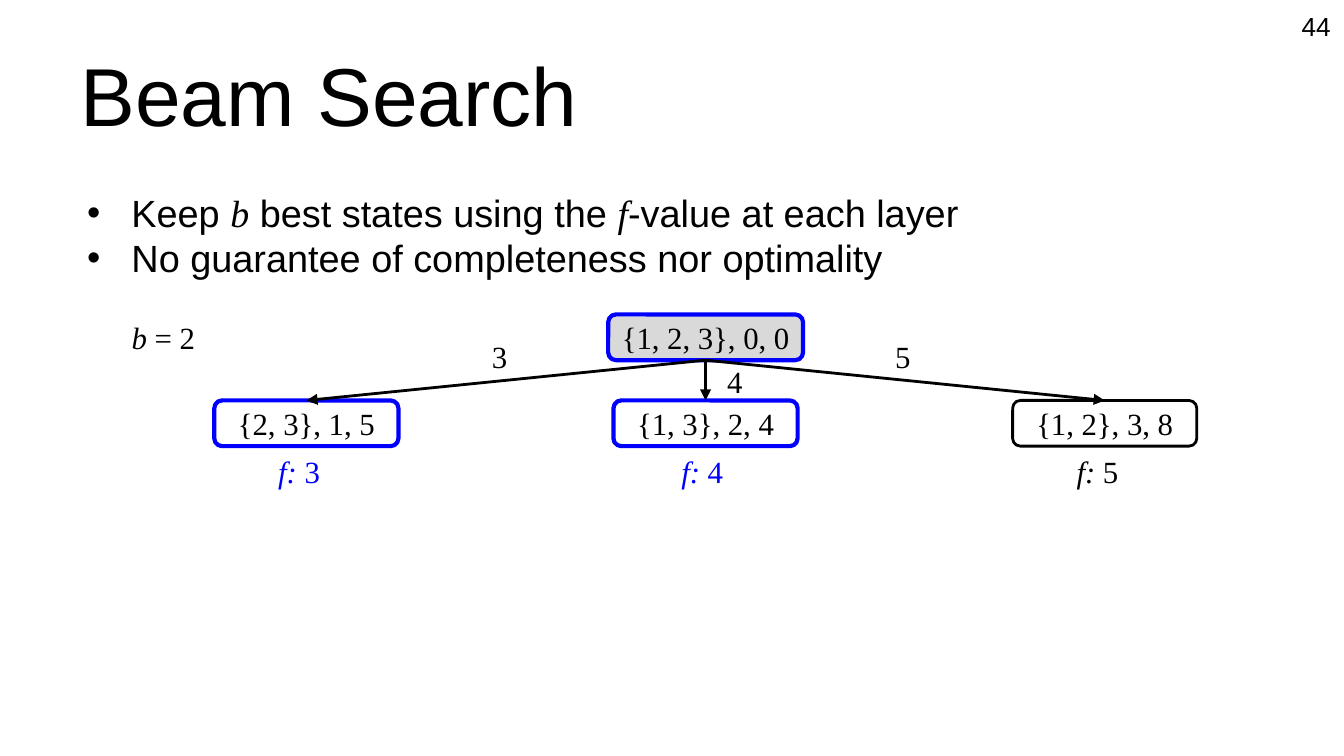
from dataclasses import dataclass

from lxml.etree import SubElement
from pptx import Presentation
from pptx.dml.color import RGBColor as Rgb
from pptx.enum.shapes import MSO_CONNECTOR as Connector, MSO_SHAPE as Shape
from pptx.enum.text import MSO_ANCHOR as Anchor, PP_ALIGN as Align
from pptx.oxml.ns import qn
from pptx.util import Inches, Pt


@dataclass(frozen=True)
class Theme:
    black: Rgb = Rgb(0x00, 0x00, 0x00)
    kept: Rgb = Rgb(0x00, 0x00, 0xFF)
    expanded: Rgb = Rgb(0xD9, 0xD9, 0xD9)
    sans: str = "Arial"
    serif: str = "Times New Roman"
    title: float = 44
    body: float = 20.3
    number: float = 14
    graph: float = 16.5
    thick: float = 2.25
    thin: float = 1.5


theme = Theme()
deck = Presentation()
deck.slide_width = Inches(10)
deck.slide_height = deck.slide_width * 9 // 16
slide = deck.slides.add_slide(deck.slide_layouts[6])
shapes = slide.shapes

# The grid has 100 columns and 56.25 rows, so its cells are square.
COL, ROW = deck.slide_width / 100, deck.slide_height / 56.25


def cells(left, top, width, height):
    return int(left * COL), int(top * ROW), int(width * COL), int(height * ROW)


def write(holder, *paragraphs, size=theme.graph, font=theme.serif, color=theme.black,
          align=Align.LEFT, anchor=Anchor.TOP, inset=0.07, bullet=None):
    """Fill a shape with paragraphs; each is a list of runs, and *run is serif italic."""
    frame = holder.text_frame
    frame.word_wrap = True
    frame.vertical_anchor = anchor
    frame.margin_left = frame.margin_right = Inches(inset)
    frame.margin_top = frame.margin_bottom = Inches(inset)
    for index, runs in enumerate(paragraphs):
        paragraph = frame.add_paragraph() if index else frame.paragraphs[0]
        paragraph.alignment = align
        if bullet:
            props = paragraph._p.get_or_add_pPr()
            props.set("marL", str(Inches(0.38)))
            props.set("indent", str(Inches(-0.33)))
            SubElement(props, qn("a:buFont"), typeface=theme.sans)
            SubElement(props, qn("a:buChar"), char=bullet)
        for text in runs:
            run = paragraph.add_run()
            run.text = text.removeprefix("*")
            run.font.italic = text.startswith("*")
            run.font.name = theme.serif if run.font.italic else font
            run.font.size = Pt(size)
            run.font.color.rgb = color


write(shapes.add_textbox(*cells(5, 2.3, 90, 9.4)), ["Beam Search"],
      size=theme.title, font=theme.sans, anchor=Anchor.MIDDLE, inset=0.1)
write(shapes.add_textbox(*cells(5, 13.1, 90, 37.1)),
      ["Keep ", "*b", " best states using the ", "*f", "-value at each layer"],
      ["No guarantee of completeness nor optimality"],
      size=theme.body, font=theme.sans, inset=0.1, bullet="•")
write(shapes.add_textbox(*cells(93.3, 0, 6.7, 3.9)), ["44"], size=theme.number,
      font=theme.sans, align=Align.RIGHT, anchor=Anchor.MIDDLE, inset=0.1)
write(shapes.add_textbox(*cells(9.1, 23, 7.8, 4.3)), ["*b", " = 2"])

# Search tree: state, centre column, top row, width, in the beam, cost
# (text, left, top), f-value (text, left). The root has no cost or f-value.
MIDDLE, SPREAD, STATE_HEIGHT = 52.5, 29.7, 3.4
states = [
    ("{1, 2, 3}, 0, 0", MIDDLE, 23.4, 14.5, True, None, None),
    ("{2, 3}, 1, 5", MIDDLE - SPREAD, 29.8, 13.7, True, ("3", 35.9, 24.4), ("3", 20)),
    ("{1, 3}, 2, 4", MIDDLE, 29.8, 13.7, True, ("4", 53.4, 26.3), ("4", 50)),
    ("{1, 2}, 3, 8", MIDDLE + SPREAD, 29.8, 13.7, False, ("5", 65.9, 24.4), ("5", 79.4)),
]
root = None
for label, centre, top, width, in_beam, cost, f_value in states:
    color = theme.kept if in_beam else theme.black
    state = shapes.add_shape(Shape.ROUNDED_RECTANGLE,
                             *cells(centre - width / 2, top, width, STATE_HEIGHT))
    state.shadow.inherit = False
    state.adjustments[0] = 0.17
    state.line.color.rgb = color
    state.line.width = Pt(theme.thick if in_beam else theme.thin)
    write(state, [label], align=Align.CENTER, anchor=Anchor.MIDDLE)

    if root is None:
        root = state
        root.fill.solid()
        root.fill.fore_color.rgb = theme.expanded
        continue
    state.fill.background()

    arrow = shapes.add_connector(Connector.STRAIGHT, 0, 0, 0, 0)
    arrow.begin_connect(root, 2)
    arrow.end_connect(state, 0)
    arrow.line.color.rgb = theme.black
    arrow.line.width = Pt(theme.thin)
    SubElement(arrow.line._get_or_add_ln(), qn("a:tailEnd"), type="triangle")
    SubElement(arrow._element.spPr, qn("a:effectLst"))

    cost_text, cost_left, cost_top = cost
    write(shapes.add_textbox(*cells(cost_left, cost_top, 2.7, 4.3)), [cost_text])
    f_text, f_left = f_value
    write(shapes.add_textbox(*cells(f_left, 33, 6, 4.3)), ["*f:", f" {f_text}"], color=color)

deck.save("out.pptx")
